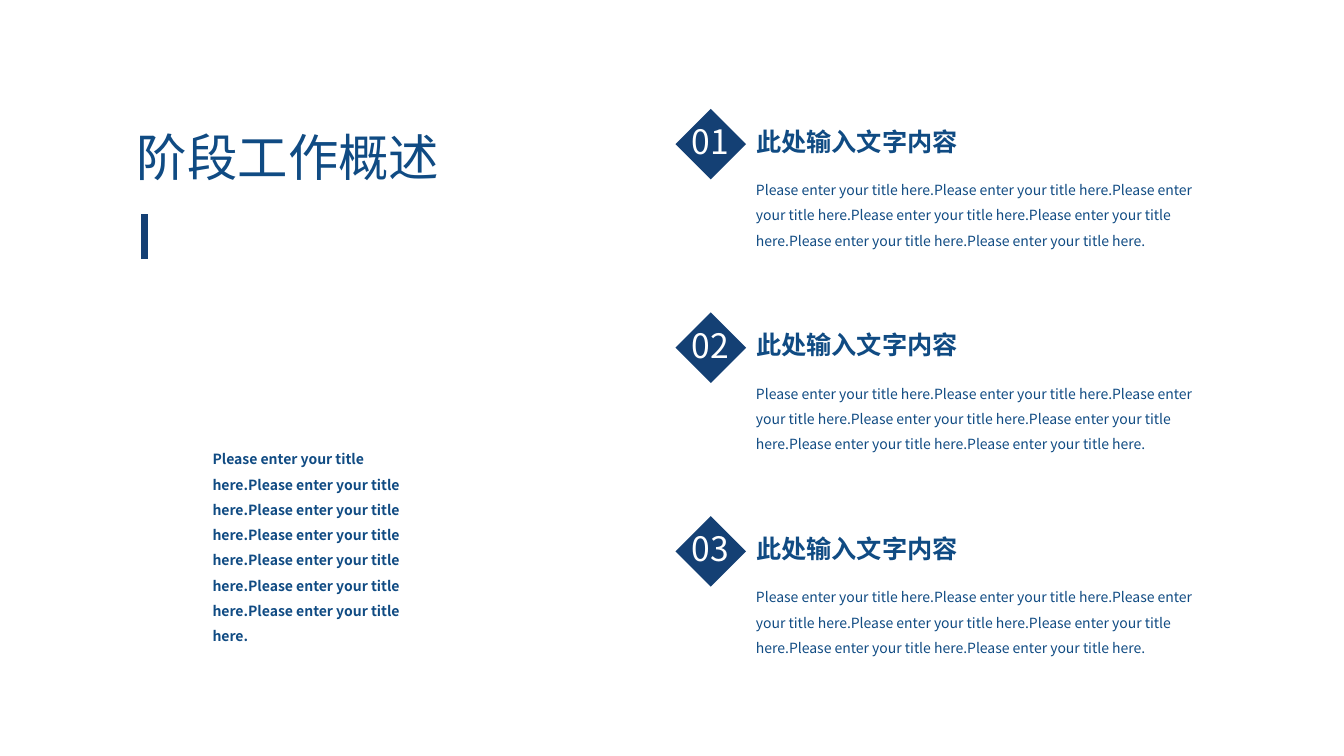
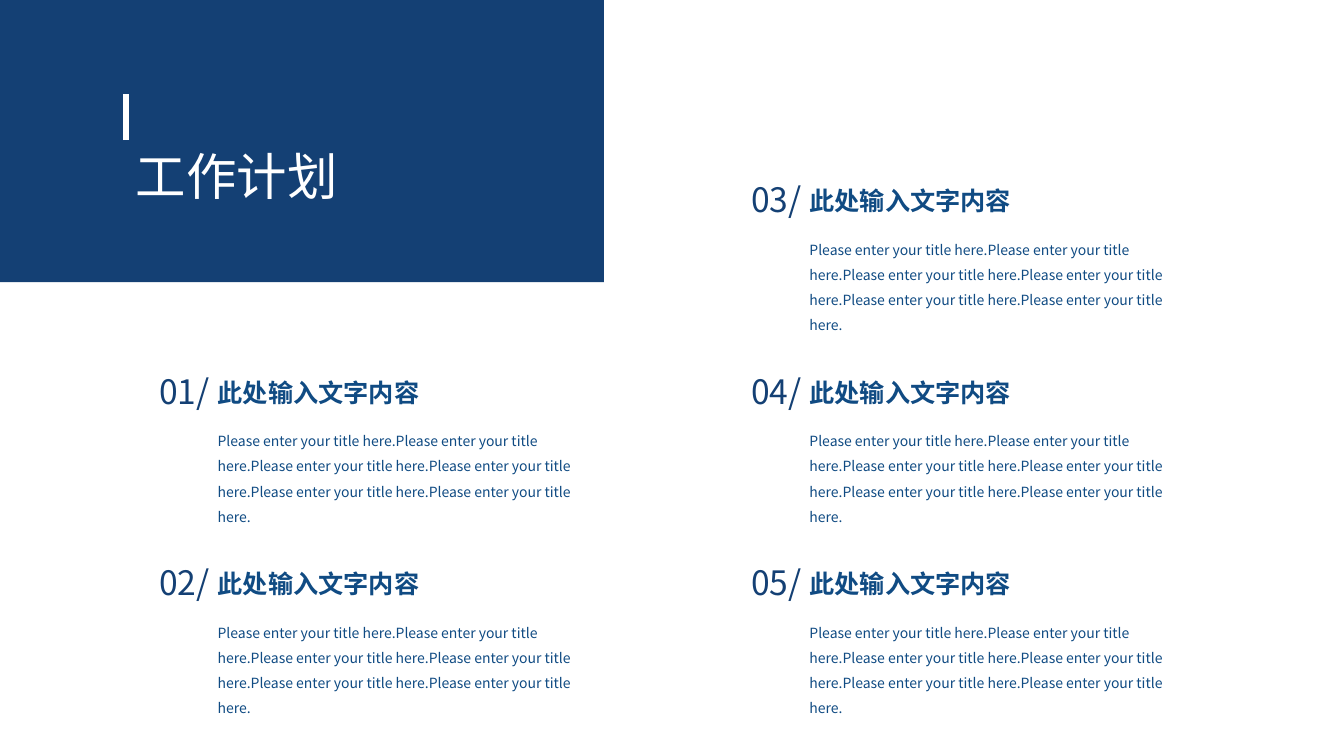
"""Build two slides: a stage overview and a work plan."""
from dataclasses import dataclass

from lxml import etree
from pptx import Presentation
from pptx import util as u
from pptx.dml.color import RGBColor
from pptx.enum import shapes, text
from pptx.oxml import ns


@dataclass(frozen=True)
class Theme:
    navy: RGBColor = RGBColor(0x14, 0x40, 0x74)
    ink: RGBColor = RGBColor(0x10, 0x4B, 0x83)
    white: RGBColor = RGBColor(0xFF, 0xFF, 0xFF)
    cjk: str = "Noto Sans CJK SC"
    latin: str = "Noto Sans CJK JP"
    title: int = 36
    number: int = 24
    heading: int = 18
    body: int = 10
    rule: float = 4.75


theme = Theme()
PX = 9144
HEADING = "此处输入文字内容"
SENTENCE = "Please enter your title here."


def write(parent, box, words, size, color, font=theme.cjk, bold=False,
          align=text.PP_ALIGN.LEFT, spacing=None, wrap=True):
    frame = parent.add_textbox(*(n * PX for n in box)).text_frame
    frame.word_wrap = wrap
    frame.auto_size = text.MSO_AUTO_SIZE.SHAPE_TO_FIT_TEXT
    paragraph = frame.paragraphs[0]
    paragraph.alignment = align
    paragraph.line_spacing = spacing
    run = paragraph.add_run()
    run.text = words
    run.font.name = font
    run.font.size = u.Pt(size)
    run.font.bold = bold
    run.font.color.rgb = color
    east_asian = etree.SubElement(run.font._element, ns.qn("a:ea"))
    east_asian.set("typeface", font)


def write_entry(parent, x, y, body_width, repeats):
    write(parent, (x, y, 221, 40), HEADING, theme.heading, theme.ink, bold=True, wrap=False)
    write(parent, (x, y + 47, body_width, 86), SENTENCE * repeats, theme.body, theme.ink,
          font=theme.latin, spacing=1.5)


deck = Presentation()
deck.slide_width = u.Emu(1333 * PX)
deck.slide_height = u.Emu(750 * PX)
blank = deck.slide_layouts[6]

overview = deck.slides.add_slide(blank)
write(overview.shapes, (126, 120, 363, 71), "阶段工作概述", theme.title, theme.ink)
write(overview.shapes, (201, 434, 235, 161), SENTENCE * 7, theme.body, theme.ink,
      font=theme.latin, bold=True, spacing=1.5)

stages = overview.shapes.add_group_shape().shapes
for index in range(3):
    x, y = 740, 120 + 202 * index
    write_entry(stages, x, y, 457, 7)
    diamond = stages.add_shape(shapes.MSO_SHAPE.DIAMOND,
                               (x - 70) * PX, (y - 12) * PX, 70 * PX, 70 * PX)
    diamond.shadow.inherit = False
    diamond.fill.solid()
    diamond.fill.fore_color.rgb = theme.navy
    diamond.line.fill.background()
    write(stages, (x - 69, y - 5, 67, 50), f"{index + 1:02}", theme.number, theme.white,
          align=text.PP_ALIGN.CENTER)

plan = deck.slides.add_slide(blank)
banner = plan.shapes.add_shape(shapes.MSO_SHAPE.RECTANGLE, 0, 0, 599 * PX, 280 * PX)
banner.shadow.inherit = False
banner.fill.solid()
banner.fill.fore_color.rgb = theme.navy
banner.line.fill.background()

cells = [(0, 1), (0, 2), (1, 0), (1, 1), (1, 2)]
for number, (column, row) in enumerate(cells, start=1):
    task = plan.shapes.add_group_shape().shapes
    x, y = 206 + 587 * column, 179 + 190 * row
    write_entry(task, x, y, 395, 6)
    write(task, (x - 63, y - 6, 80, 50), f"{number:02}/", theme.number, theme.navy,
          align=text.PP_ALIGN.CENTER)

write(plan.shapes, (125, 139, 266, 71), "工作计划", theme.title, theme.white,
      align=text.PP_ALIGN.JUSTIFY)

for slide, x, bottom, top, color in ((overview, 143, 257, 212, theme.navy),
                                     (plan, 125, 139, 93, theme.white)):
    accent = slide.shapes.add_connector(shapes.MSO_CONNECTOR.STRAIGHT,
                                        x * PX, bottom * PX, x * PX, top * PX)
    accent.line.color.rgb = color
    accent.line.width = u.Pt(theme.rule)
    etree.SubElement(accent._element.spPr, ns.qn("a:effectLst"))

deck.save("out.pptx")
